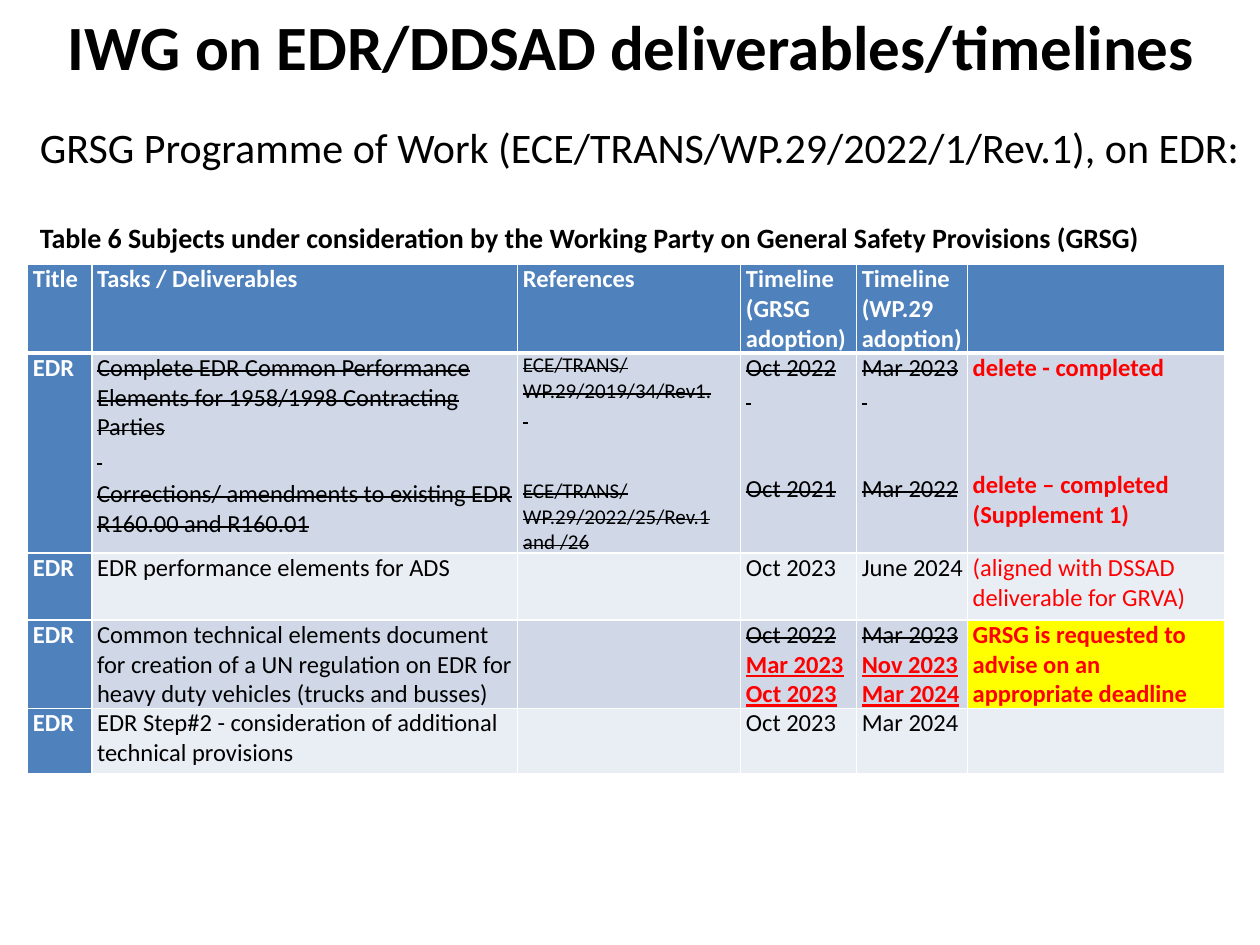
from pptx import Presentation
from pptx.dml.color import RGBColor
from pptx.enum import text
from pptx.oxml import parse_xml
from pptx.oxml import ns
from pptx.util import Pt

COLORS = {
    "black": "000000", "white": "FFFFFF", "red": "FF0000", "yellow": "FFFF00",
    "blue": "4F81BD", "band": "D0D8E8", "light": "E9EDF4",
}
STYLES = {
    "title": {"size": Pt(36), "bold": True, "color": "black"},
    "lead": {"size": Pt(24), "bold": False, "color": "black"},
    "caption": {"size": Pt(16), "bold": True, "color": "black"},
    "head": {"size": Pt(14), "bold": True, "color": "white"},
    "plain": {"size": Pt(14), "bold": False, "color": "black"},
    "done": {"size": Pt(14), "bold": False, "color": "black", "strike": True},
    "done_ref": {"size": Pt(12), "bold": False, "color": "black", "strike": True},
    "note": {"size": Pt(14), "bold": False, "color": "red"},
    "alert": {"size": Pt(14), "bold": True, "color": "red"},
    "new_date": {"size": Pt(14), "bold": True, "color": "red", "underline": True},
}
COLUMNS = [36.7, 243.4, 127.4, 66.2, 63.4, 146.9]
ROWS = [49, 105.8, 38.2, 50.4, 37.4]


def para(style, content, before=2, after=6):
    return {"runs": [(style, content)], "before": before, "after": after}


def completed(style, first, second, gap):
    return [para(style, first, after=0), para(style, " ", after=0),
            para(style, second, gap, 0)]


def revised(old, new):
    return [{"runs": [("done", old + "\n"), ("new_date", new)], "before": 2, "after": 6}]


def header(*lines):
    return [para("head", line, 0, 0) for line in lines]


def task(name, grsg, wp29, remark):
    return [[para("head", "EDR")], [para("plain", name)], [], grsg, wp29, remark]


def date(content):
    return [para("plain", content)]


TABLE = [
    [header("Title"), header("Tasks / Deliverables"), header("References"),
     header("Timeline", "(GRSG adoption)"), header("Timeline", "(WP.29 adoption)"), []],
    [[para("head", "EDR")],
     completed("done", "Complete EDR Common Performance Elements for 1958/1998 Contracting Parties",
               "Corrections/ amendments to existing EDR R160.00 and R160.01", 2),
     completed("done_ref", "ECE/TRANS/WP.29/2019/34/Rev1.",
               "ECE/TRANS/WP.29/2022/25/Rev.1 and /26", 26),
     completed("done", "Oct 2022", "Oct 2021", 33),
     completed("done", "Mar 2023", "Mar 2022", 33),
     [para("alert", "delete - completed"),
      para("alert", "delete – completed\n(Supplement 1)", 44)]],
    task("EDR performance elements for ADS", date("Oct 2023"), date("June 2024"),
         [para("note", "(aligned with DSSAD deliverable for GRVA)")]),
    task("Common technical elements document for creation of a UN regulation on EDR "
         "for heavy duty vehicles (trucks and busses)",
         revised("Oct 2022", "Mar 2023\nOct 2023"),
         revised("Mar 2023", "Nov 2023\nMar 2024"),
         [para("alert", "GRSG is requested to advise on an appropriate deadline")]),
    task("EDR Step#2 - consideration of additional technical provisions",
         date("Oct 2023"), date("Mar 2024"), []),
]


def add_run(p, style, content):
    r = p.add_run()
    r.text = content
    for name, value in STYLES[style].items():
        if name == "color":
            r.font.color.rgb = RGBColor.from_string(COLORS[value])
        elif name == "strike":
            r.font._element.set("strike", "sngStrike")
        else:
            setattr(r.font, name, value)
    r.font.name = "Calibri"
    return r


def write(tf, paragraphs, margin=0):
    runs = []
    for i, item in enumerate(paragraphs):
        p = tf.paragraphs[0] if i == 0 else tf.add_paragraph()
        p.space_before, p.space_after = Pt(item["before"]), Pt(item["after"])
        pPr = p._p.get_or_add_pPr()
        pPr.set("marL", str(Pt(margin)))
        pPr.set("indent", "0")
        for style, content in item["runs"]:
            for j, line in enumerate(content.split("\n")):
                if j:
                    p.add_line_break()
                if line:
                    runs.append(add_run(p, style, line))
    return runs


def add_shadow(r):
    fill = r.font._element.find(ns.qn("a:solidFill"))
    fill.addnext(parse_xml(
        f'<a:effectLst {ns.nsdecls("a")}><a:outerShdw blurRad="38100" dist="38100" '
        'dir="2700000" algn="tl"><a:srgbClr val="000000"><a:alpha val="43000"/>'
        '</a:srgbClr></a:outerShdw></a:effectLst>'))


def add_borders(cell, widths):
    tcPr = cell._tc.get_or_add_tcPr()
    for i, (side, width) in enumerate(widths.items()):
        tcPr.insert(i, parse_xml(
            f'<a:ln{side} {ns.nsdecls("a")} w="{Pt(width)}"><a:solidFill>'
            f'<a:srgbClr val="{COLORS["white"]}"/></a:solidFill></a:ln{side}>'))


def cell_fill(row, column):
    if row == 0 or column == 0:
        return "blue"
    if (row, column) == (3, 5):
        return "yellow"
    return "band" if row % 2 else "light"


def add_title(s, box):
    tf = s.shapes.add_textbox(*map(Pt, box)).text_frame
    tf.word_wrap = True
    tf.vertical_anchor = text.MSO_ANCHOR.MIDDLE
    write(tf, [para("title", "IWG on EDR/DDSAD deliverables/timelines", 0, 0)])
    tf.paragraphs[0].alignment = text.PP_ALIGN.CENTER


def add_intro(s, box):
    tf = s.shapes.add_textbox(*map(Pt, box)).text_frame
    tf.word_wrap = True
    for r in write(tf, [
        para("lead", "GRSG Programme of Work (ECE/TRANS/WP.29/2022/1/Rev.1), on EDR:", 6.4, 0),
        para("caption", "Table 6 Subjects under consideration by the Working Party on "
             "General Safety Provisions (GRSG)", 27.4, 0),
    ]):
        add_shadow(r)


def add_deliverables(s, box):
    table = s.shapes.add_table(len(ROWS), len(COLUMNS), *map(Pt, box)).table
    for column, width in zip(table.columns, COLUMNS):
        column.width = Pt(width)
    for i, (row, height) in enumerate(zip(table.rows, ROWS)):
        row.height = Pt(height)
        for j, cell in enumerate(row.cells):
            for side in ("left", "top", "right", "bottom"):
                setattr(cell, f"margin_{side}", 0)
            cell.fill.solid()
            cell.fill.fore_color.rgb = RGBColor.from_string(COLORS[cell_fill(i, j)])
            add_borders(cell, {"L": 1, "R": 1, "T": 3 if i == 1 else 1, "B": 3 if i == 0 else 1})
            write(cell.text_frame, TABLE[i][j], 3)


def main():
    prs = Presentation()
    prs.slide_width, prs.slide_height = Pt(720), Pt(540)
    s = prs.slides.add_slide(prs.slide_layouts[6])
    add_title(s, (0.7, 9.4, 720, 33))
    add_deliverables(s, (15.8, 151.2, sum(COLUMNS), sum(ROWS)))
    add_intro(s, (15.8, 66.2, 701.3, 436.3))
    prs.save("out.pptx")


if __name__ == "__main__":
    main()
